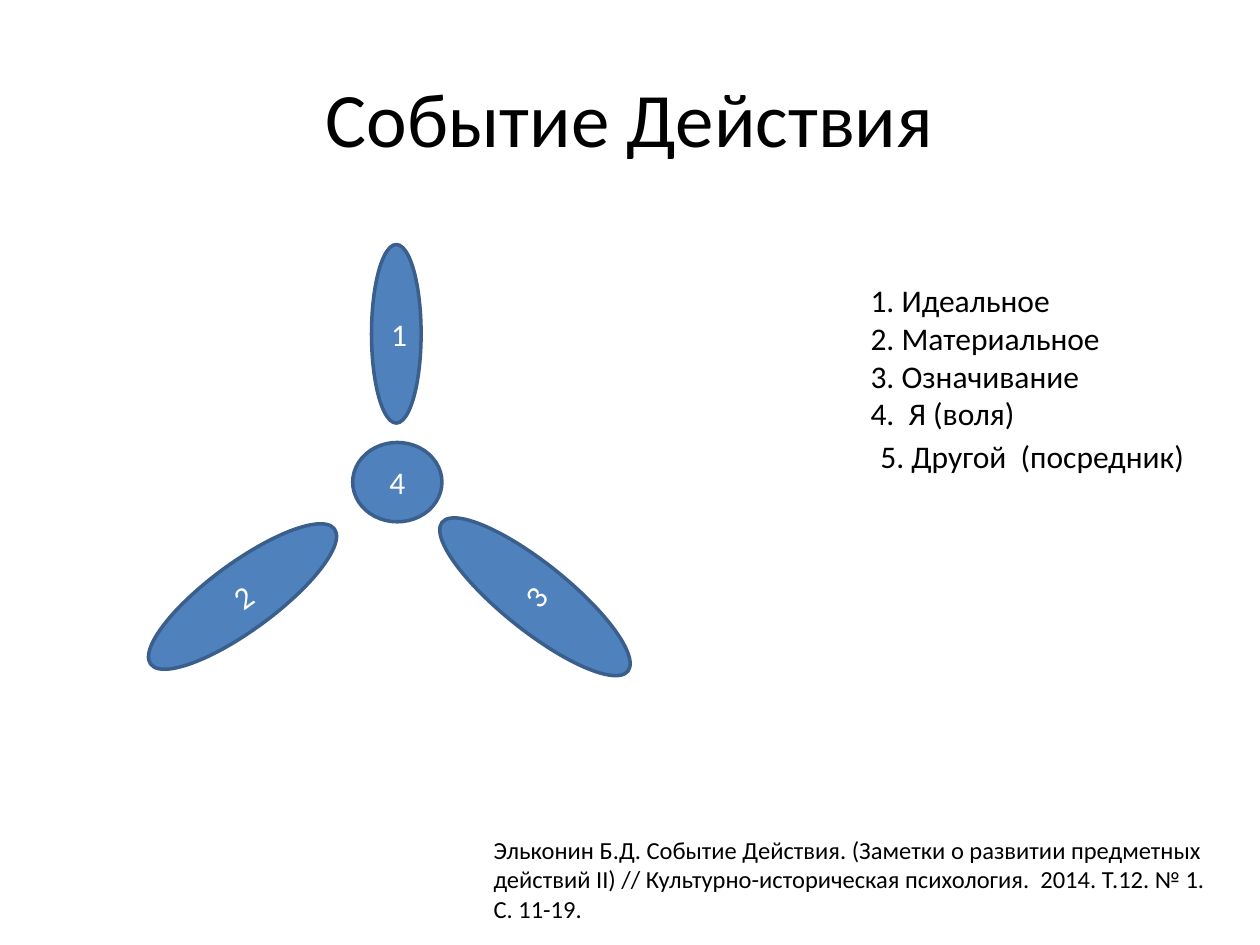
from dataclasses import dataclass

from pptx import Presentation
from pptx import util as u
from pptx.dml.color import RGBColor
from pptx.enum import shapes, text


@dataclass(frozen=True)
class Theme:
    font: str = "Calibri"
    ink: RGBColor = RGBColor(0x00, 0x00, 0x00)
    label: RGBColor = RGBColor(0xFF, 0xFF, 0xFF)
    fill: RGBColor = RGBColor(0x4F, 0x81, 0xBD)
    outline: RGBColor = RGBColor(0x3A, 0x5F, 0x8C)
    outline_width: float = 2
    title_size: int = 44
    body_size: int = 18
    source_size: int = 14


THEME = Theme()

# Label, (left, top, width, height) in cm, rotation in degrees
ELLIPSES = [
    ("4", (7.11, 8.92, 1.8, 1.6), 0),
    ("1", (7.49, 4.93, 1, 3.6), 0),
    ("2", (2.59, 11.35, 4.6, 1.35), 323.7),
    ("3", (10.11, 9.63, 1.35, 4.8), 308.7),
]

LEGEND = ["1. Идеальное", "2. Материальное", "3. Означивание", "4.  Я (воля)"]
LEGEND_OTHER = "5. Другой  (посредник)"
SOURCE = (
    "Эльконин Б.Д. Событие Действия. (Заметки о развитии предметных "
    "действий II) // Культурно-историческая психология.  2014. Т.12. № 1. "
    "С. 11-19."
)


def in_cm(box):
    return [u.Cm(length) for length in box]


def write_lines(shape, lines, size, color, align, anchor):
    frame = shape.text_frame
    frame.word_wrap = True
    frame.vertical_anchor = anchor
    frame.text = "\n".join(lines)
    for paragraph in frame.paragraphs:
        paragraph.alignment = align
        paragraph.font.name = THEME.font
        paragraph.font.size = u.Pt(size)
        paragraph.font.color.rgb = color


def add_text(slide, box, lines, size, align=text.PP_ALIGN.LEFT,
             anchor=text.MSO_ANCHOR.TOP):
    shape = slide.shapes.add_textbox(*in_cm(box))
    write_lines(shape, lines, size, THEME.ink, align, anchor)


def add_ellipse(slide, label, box, rotation):
    shape = slide.shapes.add_shape(shapes.MSO_SHAPE.OVAL, *in_cm(box))
    shape.rotation = rotation
    shape.shadow.inherit = False
    shape.fill.solid()
    shape.fill.fore_color.rgb = THEME.fill
    shape.line.color.rgb = THEME.outline
    shape.line.width = u.Pt(THEME.outline_width)
    write_lines(shape, [label], THEME.body_size, THEME.label,
                text.PP_ALIGN.CENTER, text.MSO_ANCHOR.MIDDLE)


def main():
    presentation = Presentation()
    presentation.slide_width = u.Cm(25.4)
    presentation.slide_height = u.Cm(19.05)
    slide = presentation.slides.add_slide(presentation.slide_layouts[6])

    # Title
    add_text(slide, (1.27, 0.76, 22.86, 3.18), ["Событие Действия"],
             THEME.title_size, text.PP_ALIGN.CENTER, text.MSO_ANCHOR.MIDDLE)

    # Hub with three blades
    for label, box, rotation in ELLIPSES:
        add_ellipse(slide, label, box, rotation)

    # Legend
    add_text(slide, (17.3, 5.54, 7, 3.33), LEGEND, THEME.body_size)
    add_text(slide, (17.5, 8.69, 7, 1.02), [LEGEND_OTHER], THEME.body_size)

    # Bibliographic reference
    add_text(slide, (9.7, 16.71, 15.2, 2.06), [SOURCE], THEME.source_size)

    presentation.save("out.pptx")


if __name__ == "__main__":
    main()
